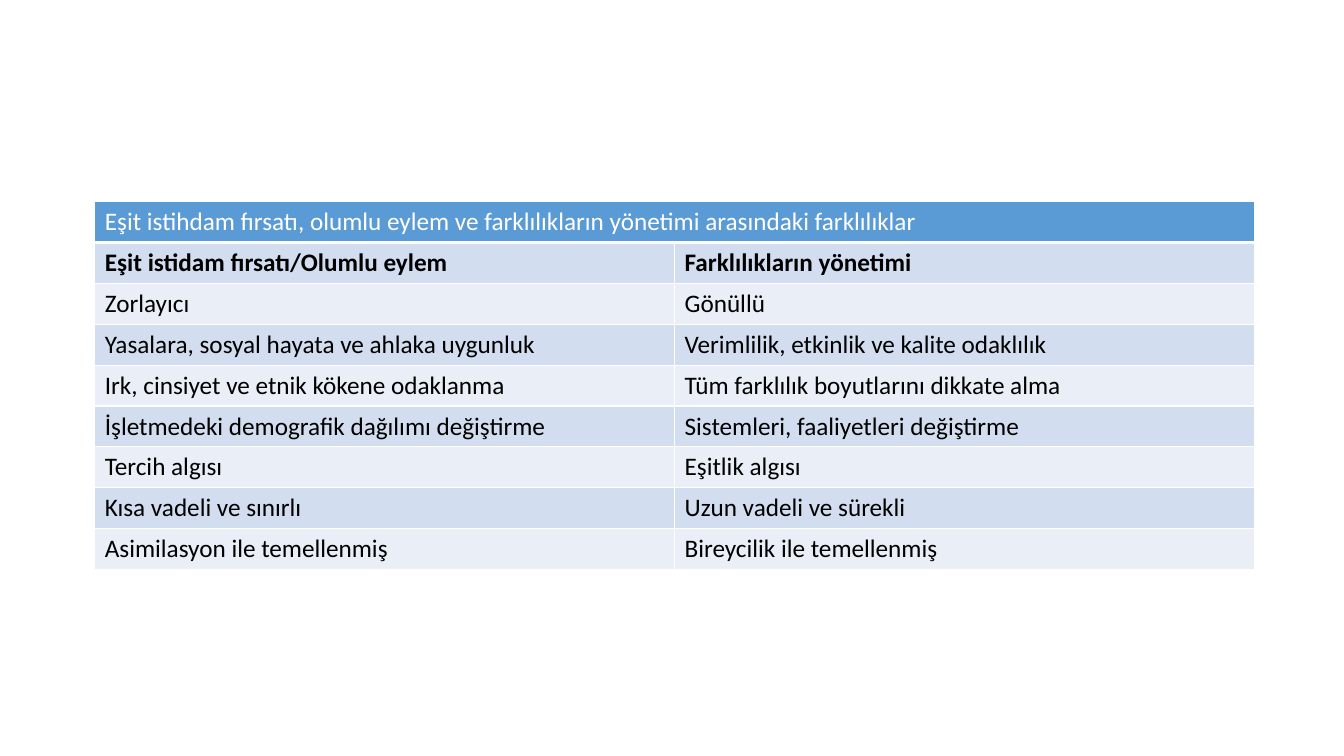
"""Build a slide with a table comparing equal opportunity and diversity management."""
from dataclasses import dataclass

from lxml import etree
from pptx import Presentation
from pptx import util as u
from pptx.dml import color
from pptx.oxml import ns
from pptx.table import Table, _Cell


@dataclass(frozen=True)
class Theme:
    """Colours, font and type size of the slide."""
    head: str = "5B9BD5"
    dark: str = "D2DEEF"
    light: str = "EAEFF7"
    white: str = "FFFFFF"
    black: str = "000000"
    font: str = "Calibri"
    size: int = 18


@dataclass(frozen=True)
class Row:
    """One table row with its wording and look."""
    texts: tuple[str, ...]
    fill: str
    ink: str = Theme.black
    bold: bool = False
    base: int = 1


THEME = Theme()
TITLE = "Eşit istihdam fırsatı, olumlu eylem ve farklılıkların yönetimi arasındaki farklılıklar"
PAIRS = [
    ("Eşit istidam fırsatı/Olumlu eylem", "Farklılıkların yönetimi"),
    ("Zorlayıcı", "Gönüllü"),
    ("Yasalara, sosyal hayata ve ahlaka uygunluk", "Verimlilik, etkinlik ve kalite odaklılık"),
    ("Irk, cinsiyet ve etnik kökene odaklanma", "Tüm farklılık boyutlarını dikkate alma"),
    ("İşletmedeki demografik dağılımı değiştirme", "Sistemleri, faaliyetleri değiştirme"),
    ("Tercih algısı", "Eşitlik algısı"),
    ("Kısa vadeli ve sınırlı", "Uzun vadeli ve sürekli"),
    ("Asimilasyon ile temellenmiş", "Bireycilik ile temellenmiş"),
]
ROWS = [Row((TITLE, ""), THEME.head, THEME.white, base=3)] + [
    Row(pair, THEME.light if i % 2 else THEME.dark, bold=i == 0)
    for i, pair in enumerate(PAIRS)
]


def edge(cell: _Cell, base: int) -> None:
    """Draw white borders, with the bottom one of the given width in points."""
    props = cell._tc.get_or_add_tcPr()
    for side, width in {"L": 1, "R": 1, "T": 1, "B": base}.items():
        line = etree.SubElement(props, ns.qn(f"a:ln{side}"), w=str(u.Pt(width)))
        fill = etree.SubElement(line, ns.qn("a:solidFill"))
        etree.SubElement(fill, ns.qn("a:srgbClr"), val=THEME.white)


def write(cell: _Cell, words: str, row: Row) -> None:
    """Fill one cell with its words, colours and borders."""
    edge(cell, row.base)
    cell.fill.solid()
    cell.fill.fore_color.rgb = color.RGBColor.from_string(row.fill)
    if not words:
        return
    run = cell.text_frame.paragraphs[0].add_run()
    run.text = words
    style = {"name": THEME.font, "size": u.Pt(THEME.size), "bold": row.bold}
    for key, value in style.items():
        setattr(run.font, key, value)
    run.font.color.rgb = color.RGBColor.from_string(row.ink)


def fill(table: Table) -> None:
    """Write all rows and join the title row."""
    for i, row in enumerate(ROWS):
        for j, words in enumerate(row.texts):
            write(table.cell(i, j), words, row)
    table.cell(0, 0).merge(table.cell(0, 1))


def main() -> None:
    """Make the slide and save it."""
    deck = Presentation()
    deck.slide_width, deck.slide_height = u.Inches(13.33), u.Inches(7.5)
    slide = deck.slides.add_slide(deck.slide_layouts[6])
    place = [u.Inches(n) for n in (0.94, 2, 11.5, 3.65)]
    fill(slide.shapes.add_table(len(ROWS), 2, *place).table)
    deck.save("out.pptx")


if __name__ == "__main__":
    main()
